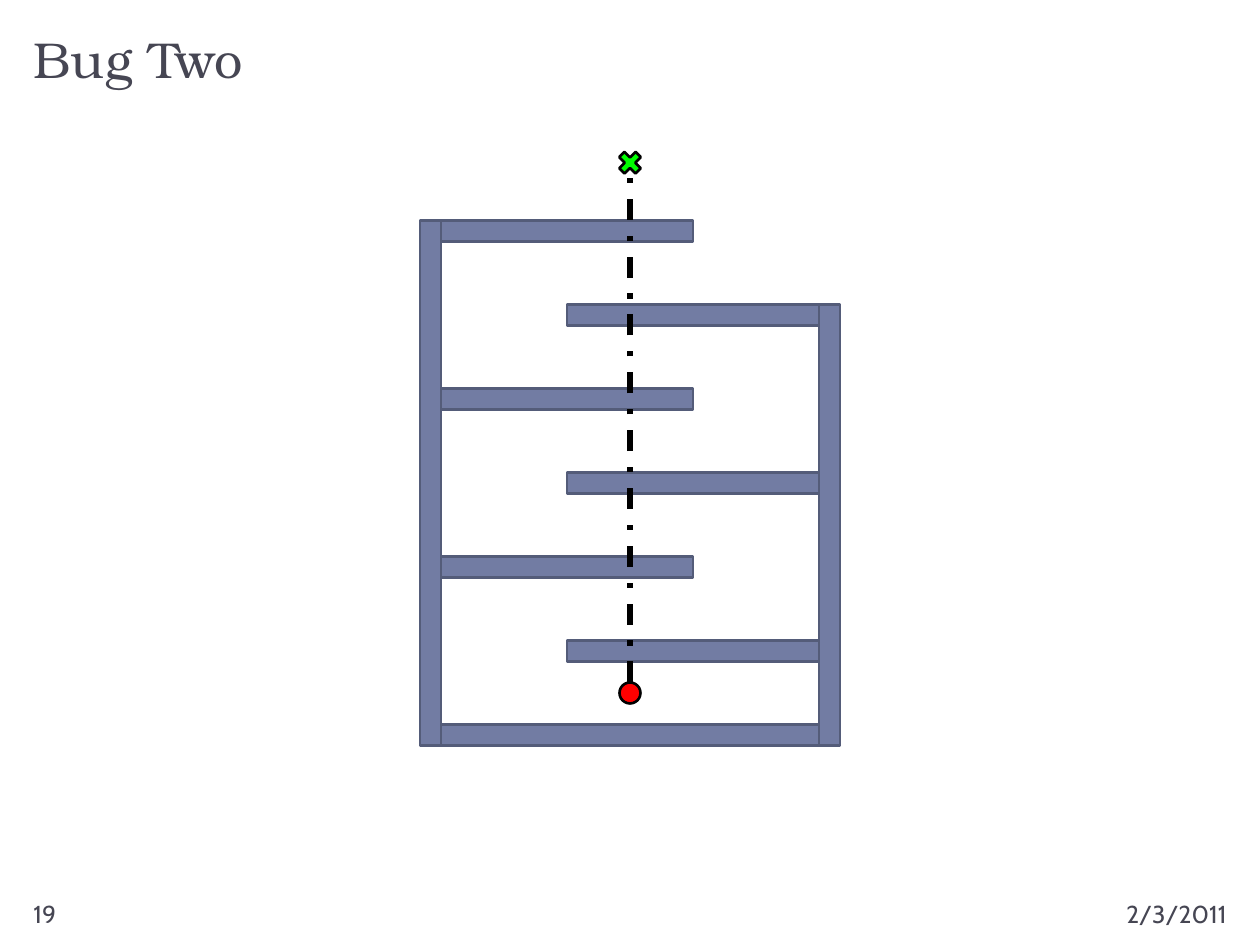
from lxml import etree
from pptx import Presentation
from pptx.dml.color import RGBColor
from pptx.enum.dml import MSO_LINE
from pptx.enum.shapes import MSO_CONNECTOR, MSO_SHAPE
from pptx.enum.text import MSO_ANCHOR, MSO_AUTO_SIZE, PP_ALIGN
from pptx.oxml.ns import qn
from pptx.util import Pt

COLORS = {
    "text": "464653",
    "wall": "727CA3",
    "wall_edge": "545C79",
    "goal": "00FF00",
    "start": "FF0000",
    "black": "000000",
}
TITLE_FONT = "TeX Gyre Bonum"
BODY_FONT = "Cabin"

THICKNESS = 12
LEFT_WALL, RIGHT_WALL = 240, 468
INNER_LEFT = LEFT_WALL + THICKNESS
TOP, FLOOR = 126, 414
BOTTOM = FLOOR + THICKNESS
SHELF_WIDTH, SHELF_STEP, SHELF_COUNT = 144, 48, 6
CENTER = 360
GOAL_TOP, GOAL_SIZE = 84, 18
START_TOP = 390


def color(name):
    return RGBColor.from_string(COLORS[name])


def write_text(frame, text, font=BODY_FONT, size=14, align=PP_ALIGN.LEFT,
               anchor=MSO_ANCHOR.TOP):
    frame.word_wrap = True
    frame.auto_size = MSO_AUTO_SIZE.NONE
    frame.vertical_anchor = anchor
    paragraph = frame.paragraphs[0]
    paragraph.alignment = align
    run = paragraph.add_run()
    run.text = text
    run.font.name = font
    run.font.size = Pt(size)
    run.font.color.rgb = color("text")


class SlideBuilder:
    def __init__(self, slide, line_width=1.5):
        self.slide = slide
        self.line_width = line_width

    def title(self, text, left, top, width, height):
        title = self.slide.shapes.title
        title.left, title.top = Pt(left), Pt(top)
        title.width, title.height = Pt(width), Pt(height)
        write_text(title.text_frame, text, font=TITLE_FONT, size=28.8,
                   anchor=MSO_ANCHOR.BOTTOM)

    def label(self, text, left, top, width, height, **text_format):
        box = self.slide.shapes.add_textbox(
            Pt(left), Pt(top), Pt(width), Pt(height))
        write_text(box.text_frame, text, **text_format)

    def shape(self, kind, left, top, width, height, fill, edge):
        shape = self.slide.shapes.add_shape(
            kind, Pt(left), Pt(top), Pt(width), Pt(height))
        shape.shadow.inherit = False
        shape.fill.solid()
        shape.fill.fore_color.rgb = color(fill)
        shape.line.color.rgb = color(edge)
        shape.line.width = Pt(self.line_width)

    def wall(self, left, top, width=THICKNESS, height=THICKNESS):
        self.shape(MSO_SHAPE.RECTANGLE, left, top, width, height,
                   "wall", "wall_edge")

    def dashed_line(self, start_x, start_y, end_x, end_y):
        line = self.slide.shapes.add_connector(
            MSO_CONNECTOR.STRAIGHT,
            Pt(start_x), Pt(start_y), Pt(end_x), Pt(end_y))
        line.line.color.rgb = color("black")
        line.line.width = Pt(3)
        line.line.dash_style = MSO_LINE.DASH_DOT
        properties = line._element.find(qn("p:spPr"))
        etree.SubElement(properties, qn("a:effectLst"))


def draw_maze(builder):
    for index in range(SHELF_COUNT):
        left = RIGHT_WALL - SHELF_WIDTH if index % 2 else INNER_LEFT
        builder.wall(left, TOP + index * SHELF_STEP, width=SHELF_WIDTH)
    right_top = TOP + SHELF_STEP
    builder.wall(LEFT_WALL, TOP, height=BOTTOM - TOP)
    builder.wall(RIGHT_WALL, right_top, height=BOTTOM - right_top)
    builder.wall(INNER_LEFT, FLOOR, width=RIGHT_WALL - INNER_LEFT)


def draw_route(builder):
    builder.shape(MSO_SHAPE.MATH_MULTIPLY, CENTER - GOAL_SIZE / 2, GOAL_TOP,
                  GOAL_SIZE, GOAL_SIZE, "goal", "black")
    builder.shape(MSO_SHAPE.OVAL, CENTER - THICKNESS / 2, START_TOP,
                  THICKNESS, THICKNESS, "start", "black")
    builder.dashed_line(CENTER, START_TOP, CENTER, GOAL_TOP + GOAL_SIZE)


def main():
    presentation = Presentation()
    presentation.slide_width, presentation.slide_height = Pt(720), Pt(540)
    title_only = presentation.slide_layouts[5]
    builder = SlideBuilder(presentation.slides.add_slide(title_only))

    builder.title("Bug Two", 12, 12, 696, 42)
    builder.label("2/3/2011", 576, 510, 132, 19.2, align=PP_ALIGN.RIGHT)
    builder.label("19", 12, 510, 156, 19.2)
    draw_maze(builder)
    draw_route(builder)
    presentation.save("out.pptx")


if __name__ == "__main__":
    main()
